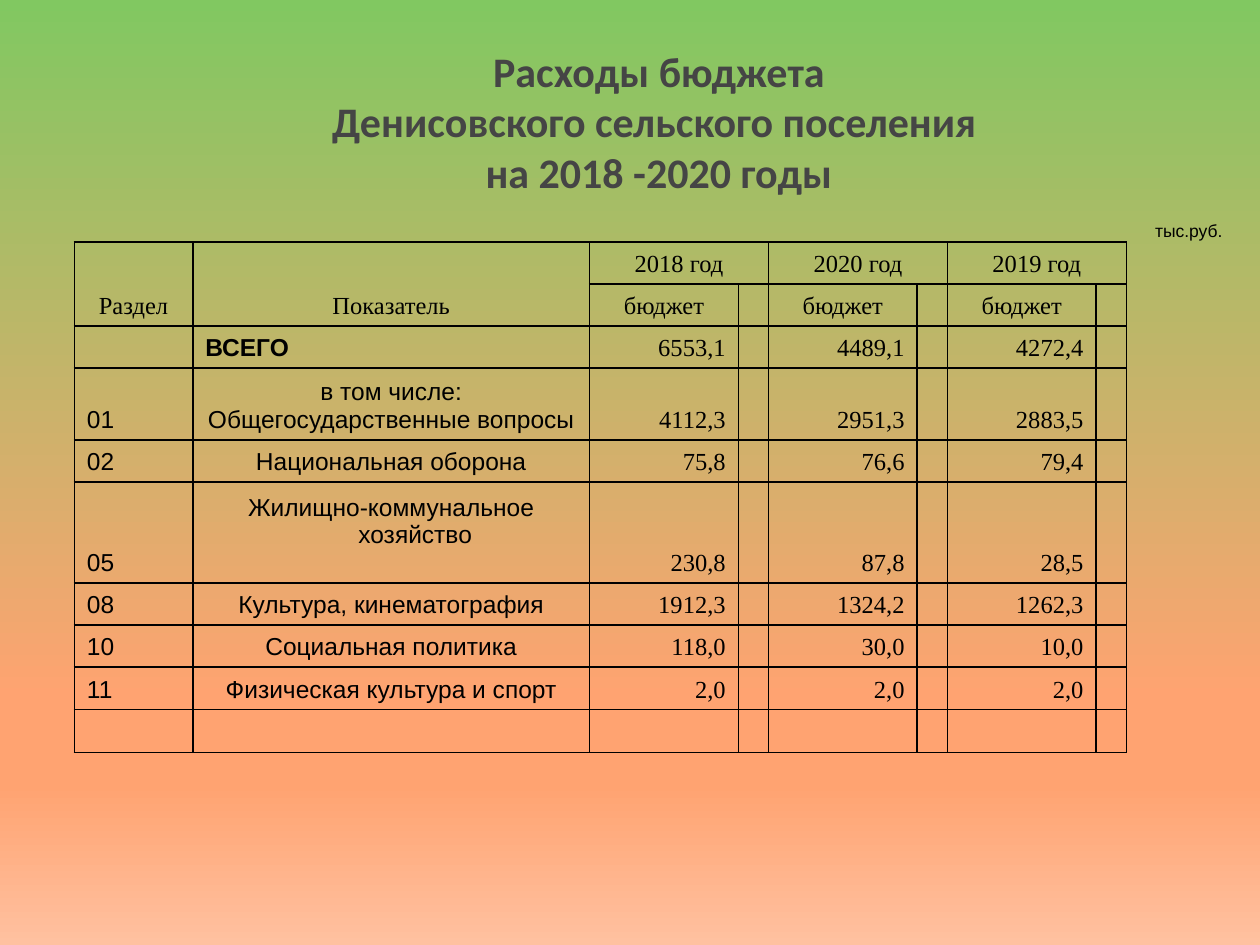
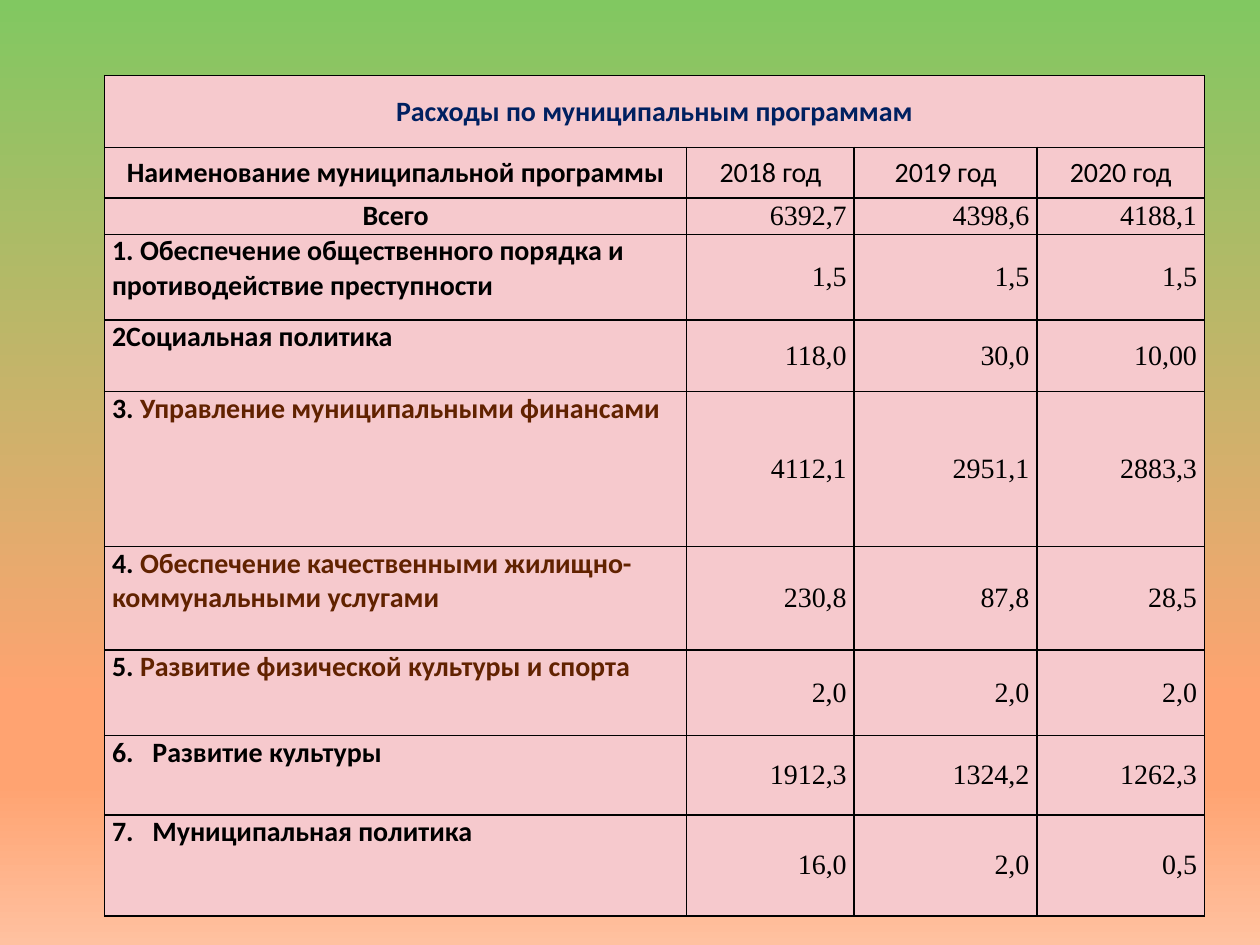
from lxml import etree
from pptx import Presentation
from pptx.dml.color import RGBColor
from pptx.enum.text import MSO_ANCHOR, PP_ALIGN
from pptx.oxml.ns import qn
from pptx.util import Inches, Pt

LEFT, CENTER, RIGHT = PP_ALIGN.LEFT, PP_ALIGN.CENTER, PP_ALIGN.RIGHT
TOP, MIDDLE, BOTTOM = MSO_ANCHOR.TOP, MSO_ANCHOR.MIDDLE, MSO_ANCHOR.BOTTOM

BLACK = RGBColor(0x00, 0x00, 0x00)
GRAY = RGBColor(0x45, 0x45, 0x45)
NAVY = RGBColor(0x00, 0x20, 0x60)
BROWN = RGBColor(0x61, 0x22, 0x00)
PINK = RGBColor(0xF6, 0xC9, 0xCD)
GREEN = RGBColor(0x81, 0xC8, 0x61)
ORANGE = RGBColor(0xFF, 0xA3, 0x71)
PEACH = RGBColor(0xFF, 0xC1, 0xA0)
BACKDROP = [(0, GREEN), (74, ORANGE), (83, ORANGE), (100, PEACH)]

SANS, SERIF, HEADING = "Arial", "Times New Roman", "Calibri"

BUDGET_TITLE = "Расходы бюджета\nДенисовского сельского поселения \nна 2018 -2020 годы"
UNIT = "тыс.руб."
SECTION_LABEL, INDICATOR_LABEL, BUDGET_LABEL = "Раздел", "Показатель", "бюджет"
BUDGET_YEARS = ["2018 год", "2020 год", "2019 год"]
TOTAL = "ВСЕГО"
SECTIONS = [
    ("", TOTAL, ["6553,1", "4489,1", "4272,4"]),
    ("01", "в том числе:\nОбщегосударственные вопросы", ["4112,3", "2951,3", "2883,5"]),
    ("02", "Национальная оборона", ["75,8", "76,6", "79,4"]),
    ("05", "Жилищно-коммунальное хозяйство", ["230,8", "87,8", "28,5"]),
    ("08", "Культура, кинематография", ["1912,3", "1324,2", "1262,3"]),
    ("10", "Социальная политика", ["118,0", "30,0", "10,0"]),
    ("11", "Физическая культура и спорт", ["2,0", "2,0", "2,0"]),
]
BUDGET_COLUMNS = [0.94, 3.15] + [1.18, 0.24] * 3
BUDGET_ROWS = [0.33, 0.33, 0.33, 0.57, 0.33, 0.8, 0.33, 0.33, 0.34, 0.34]
RAISED_SECTION = "05"

PROGRAMS_TITLE = "Расходы по муниципальным программам"
PROGRAM_LABEL = "Наименование муниципальной программы"
PROGRAM_YEARS = ["2018 год", "2019 год", "2020 год"]
PROGRAMS_TOTAL = ("Всего", ["6392,7", "4398,6", "4188,1"])
PROGRAMS = [
    ("1. ", "Обеспечение общественного порядка и противодействие преступности",
     BLACK, ["1,5", "1,5", "1,5"]),
    ("2", "Социальная политика", BLACK, ["118,0", "30,0", "10,00"]),
    ("3. ", "Управление муниципальными финансами", BROWN, ["4112,1", "2951,1", "2883,3"]),
    ("4. ", "Обеспечение качественными жилищно-коммунальными услугами",
     BROWN, ["230,8", "87,8", "28,5"]),
    ("5. ", "Развитие физической культуры и спорта", BROWN, ["2,0", "2,0", "2,0"]),
    ("6.\t", "Развитие культуры", BLACK, ["1912,3", "1324,2", "1262,3"]),
    ("7.\t", "Муниципальная политика", BLACK, ["16,0", "2,0", "0,5"]),
]
PROGRAM_COLUMNS = [4.62, 1.33, 1.45, 1.33]
PROGRAM_ROWS = [0.57, 0.4, 0.29, 0.68, 0.57, 1.23, 0.82, 0.68, 0.63, 0.8]


def write(frame, text, lead="", size=14, font=SERIF, color=BLACK, bold=False,
          align=LEFT, hang=0):
    frame.word_wrap = True
    for index, line in enumerate(text.split("\n")):
        paragraph = frame.paragraphs[0] if index == 0 else frame.add_paragraph()
        paragraph.alignment = align
        if hang:
            properties = paragraph._p.get_or_add_pPr()
            properties.set("marL", str(Inches(hang)))
            properties.set("indent", str(-Inches(hang)))
        for part, part_color in [(lead, BLACK), (line, color)]:
            if part:
                run = paragraph.add_run()
                run.text = part
                run.font.size = Pt(size)
                run.font.name = font
                run.font.bold = bold
                run.font.color.rgb = part_color


def paint_backdrop(master):
    fill = master.background.fill
    fill.gradient()
    fill.gradient_angle = 270
    stops = master.element.find(".//" + qn("a:gsLst"))
    for stop in list(stops):
        stops.remove(stop)
    for percent, color in BACKDROP:
        stop = etree.SubElement(stops, qn("a:gs"), pos=str(percent * 1000))
        etree.SubElement(stop, qn("a:srgbClr"), val=str(color))


def add_border(cell):
    properties = cell._tc.get_or_add_tcPr()
    for side in ("lnL", "lnR", "lnT", "lnB"):
        line = etree.SubElement(properties, qn("a:" + side), w=str(Pt(1)))
        solid = etree.SubElement(line, qn("a:solidFill"))
        etree.SubElement(solid, qn("a:srgbClr"), val=str(BLACK))


def add_grid(slide, left, top, columns, rows, margin, fill=None):
    table = slide.shapes.add_table(
        len(rows), len(columns), Inches(left), Inches(top),
        Inches(sum(columns)), Inches(sum(rows))).table
    table.first_row = table.horz_banding = False
    for column, width in zip(table.columns, columns):
        column.width = Inches(width)
    for row, height in zip(table.rows, rows):
        row.height = Inches(height)
        for cell in row.cells:
            add_border(cell)
            if fill:
                cell.fill.solid()
                cell.fill.fore_color.rgb = fill
            else:
                cell.fill.background()
            cell.margin_left = cell.margin_right = Inches(margin)
            cell.margin_top = cell.margin_bottom = 0
    return table


def add_text(slide, left, top, width, height, text, **style):
    frame = slide.shapes.add_textbox(
        Inches(left), Inches(top), Inches(width), Inches(height)).text_frame
    write(frame, text, **style)
    return frame


def build_budget(slide):
    title = add_text(slide, 0.98, 0.28, 8.5, 1.25, BUDGET_TITLE, size=24,
                     font=HEADING, color=GRAY, bold=True, align=CENTER)
    title.margin_top = Inches(0.08)
    table = add_grid(slide, 0.59, 1.92, BUDGET_COLUMNS, BUDGET_ROWS, 0.1)

    def put(row, column, text, below=0.05, **style):
        cell = table.cell(row, column)
        cell.vertical_anchor = BOTTOM
        cell.margin_top, cell.margin_bottom = Inches(0.05), Inches(below)
        write(cell.text_frame, text, hang=0.38, **style)

    for column, label in enumerate([SECTION_LABEL, INDICATOR_LABEL]):
        table.cell(0, column).merge(table.cell(1, column))
        put(0, column, label, align=CENTER)
    for index, year in enumerate(BUDGET_YEARS):
        column = 2 + 2 * index
        table.cell(0, column).merge(table.cell(0, column + 1))
        put(0, column, year, align=CENTER)
        put(1, column, BUDGET_LABEL, align=CENTER)
    for row, (code, name, amounts) in enumerate(SECTIONS, 2):
        if code:
            put(row, 0, code, font=SANS)
        is_total = name == TOTAL
        put(row, 1, name, below=0.27 if code == RAISED_SECTION else 0.05, font=SANS,
            bold=is_total, align=LEFT if is_total else CENTER)
        for index, amount in enumerate(amounts):
            put(row, 2 + 2 * index, amount, align=RIGHT)

    add_text(slide, 8.07, 1.7, 1.73, 0.27, UNIT, size=10, font=SANS, align=RIGHT)


def build_programs(slide):
    table = add_grid(slide, 0.83, 0.6, PROGRAM_COLUMNS, PROGRAM_ROWS, 0.06, PINK)

    def put(row, column, text, anchor=MIDDLE, font=HEADING, **style):
        cell = table.cell(row, column)
        cell.vertical_anchor = anchor
        write(cell.text_frame, text, size=16, font=font, **style)

    def put_amounts(row, amounts):
        for column, amount in enumerate(amounts, 1):
            put(row, column, amount, font=SERIF, align=RIGHT)

    table.cell(0, 0).merge(table.cell(0, len(PROGRAM_YEARS)))
    put(0, 0, PROGRAMS_TITLE, color=NAVY, bold=True, align=CENTER)
    put(1, 0, PROGRAM_LABEL, bold=True, align=CENTER)
    for column, year in enumerate(PROGRAM_YEARS, 1):
        put(1, column, year, align=CENTER)
    total_label, totals = PROGRAMS_TOTAL
    put(2, 0, total_label, bold=True, align=CENTER)
    put_amounts(2, totals)
    for row, (number, name, color, amounts) in enumerate(PROGRAMS, 3):
        put(row, 0, name, anchor=TOP, lead=number, color=color, bold=True,
            hang=0.32 if number.endswith("\t") else 0)
        put_amounts(row, amounts)


def main():
    deck = Presentation()
    deck.slide_width, deck.slide_height = Inches(10), Inches(7.5)
    paint_backdrop(deck.slide_master)
    blank = deck.slide_layouts[6]
    for build in (build_budget, build_programs):
        build(deck.slides.add_slide(blank))
    deck.save("out.pptx")


if __name__ == "__main__":
    main()
